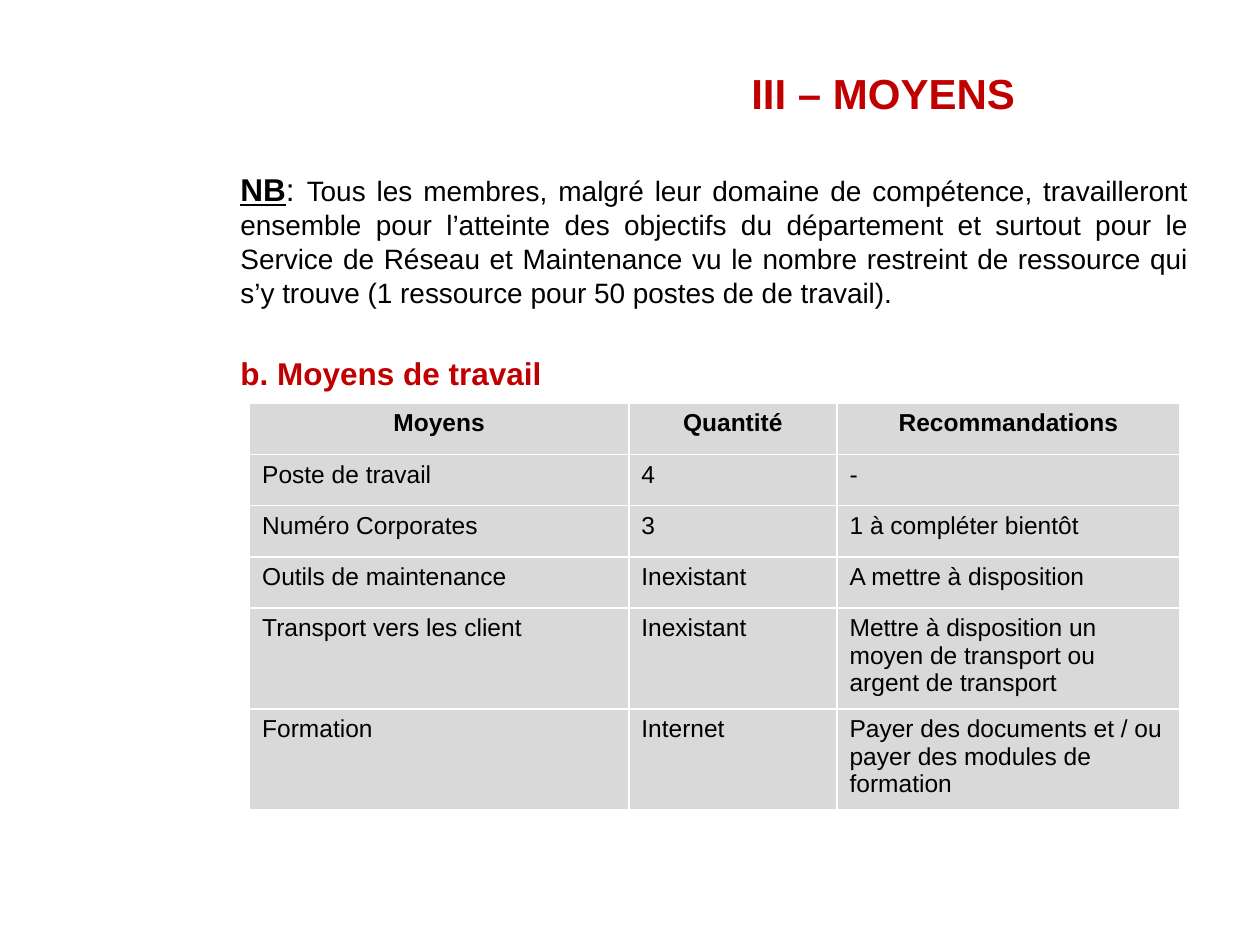
from pptx import Presentation
from pptx.dml.color import RGBColor
from pptx.enum import text
from pptx.util import Pt

RED, BLACK, GREY = "C00000", "000000", "D9D9D9"
COLUMN_WIDTHS = (216.7, 119, 196)
ROW_HEIGHTS = (29.3,) * 4 + (54.2,) * 2
ROWS = (
    ("Moyens", "Quantité", "Recommandations"),
    ("Poste de travail", "4", "-"),
    ("Numéro Corporates", "3", "1 à compléter bientôt"),
    ("Outils de maintenance", "Inexistant", "A mettre à disposition"),
    ("Transport vers les client", "Inexistant",
     "Mettre à disposition un moyen de transport ou argent de transport"),
    ("Formation", "Internet",
     "Payer des documents et / ou payer des modules de formation"),
)
NOTE = (
    "Tous les membres, malgré leur domaine de compétence, travailleront "
    "ensemble pour l’atteinte des objectifs du département et surtout pour le "
    "Service de Réseau et Maintenance vu le nombre restreint de ressource qui "
    "s’y trouve (1 ressource pour 50 postes de de travail)."
)


def color(hex_string):
    return RGBColor.from_string(hex_string)


def set_font(font, size, hex_string, bold=False):
    font.name = "Arial"
    font.size = Pt(size)
    font.bold = bold
    font.color.rgb = color(hex_string)


def add_title(slide, left, top, width, height):
    title = slide.shapes.title
    title.left, title.top = Pt(left), Pt(top)
    title.width, title.height = Pt(width), Pt(height)
    frame = title.text_frame
    frame.text = "III – MOYENS"
    frame.vertical_anchor = text.MSO_ANCHOR.MIDDLE
    paragraph = frame.paragraphs[0]
    paragraph.alignment = text.PP_ALIGN.CENTER
    set_font(paragraph.font, 24, RED, bold=True)


def add_note(slide, left, top, width, height):
    shape = slide.shapes.add_textbox(Pt(left), Pt(top), Pt(width), Pt(height))
    frame = shape.text_frame
    frame.word_wrap = True
    note = frame.paragraphs[0]
    for words, size, bold in (("NB", 18, True), (": ", 18, False), (NOTE, 16, False)):
        run = note.add_run()
        run.text = words
        set_font(run.font, size, BLACK, bold)
        run.font.underline = bold
    heading = frame.add_paragraph()
    heading.text = "b. Moyens de travail"
    heading.space_before = Pt(28)
    set_font(heading.font, 18, RED, bold=True)
    for paragraph in frame.paragraphs:
        paragraph.alignment = text.PP_ALIGN.JUSTIFY
        paragraph.line_spacing = Pt(19.4)


def add_resource_table(slide, left, top):
    shape = slide.shapes.add_table(
        len(ROWS), len(COLUMN_WIDTHS), Pt(left), Pt(top),
        Pt(sum(COLUMN_WIDTHS)), Pt(sum(ROW_HEIGHTS)))
    table = shape.table
    for column, width in zip(table.columns, COLUMN_WIDTHS):
        column.width = Pt(width)
    for row_index, (row, height, words) in enumerate(zip(table.rows, ROW_HEIGHTS, ROWS)):
        row.height = Pt(height)
        is_header = row_index == 0
        for cell, label in zip(row.cells, words):
            cell.fill.solid()
            cell.fill.fore_color.rgb = color(GREY)
            cell.text = label
            paragraph = cell.text_frame.paragraphs[0]
            paragraph.alignment = text.PP_ALIGN.CENTER if is_header else text.PP_ALIGN.LEFT
            set_font(paragraph.font, 14, BLACK, bold=is_header)


def main():
    presentation = Presentation()
    presentation.slide_width, presentation.slide_height = Pt(720), Pt(540)
    slide = presentation.slides.add_slide(presentation.slide_layouts[5])
    add_title(slide, 289.4, 24.5, 430.6, 56.9)
    add_note(slide, 130.3, 95.6, 555.8, 135)
    add_resource_table(slide, 142.6, 230.4)
    presentation.save("out.pptx")


if __name__ == "__main__":
    main()
